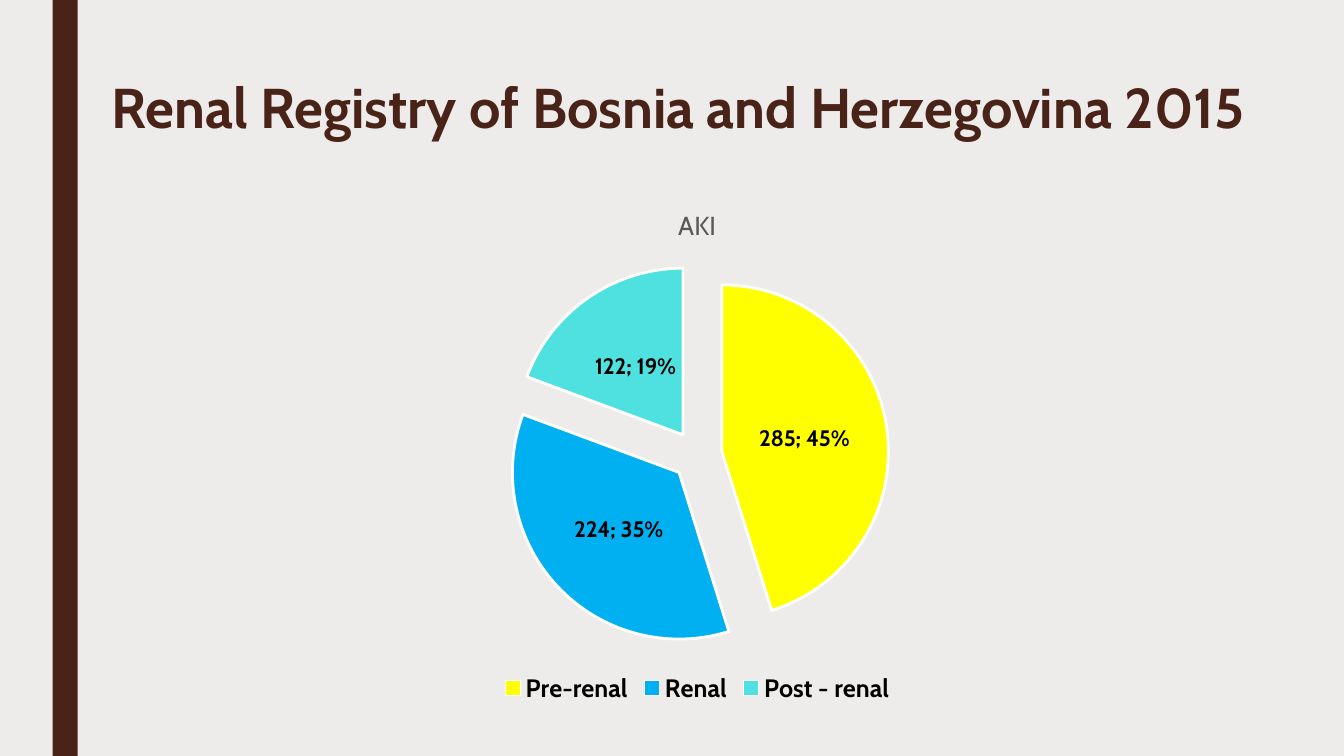
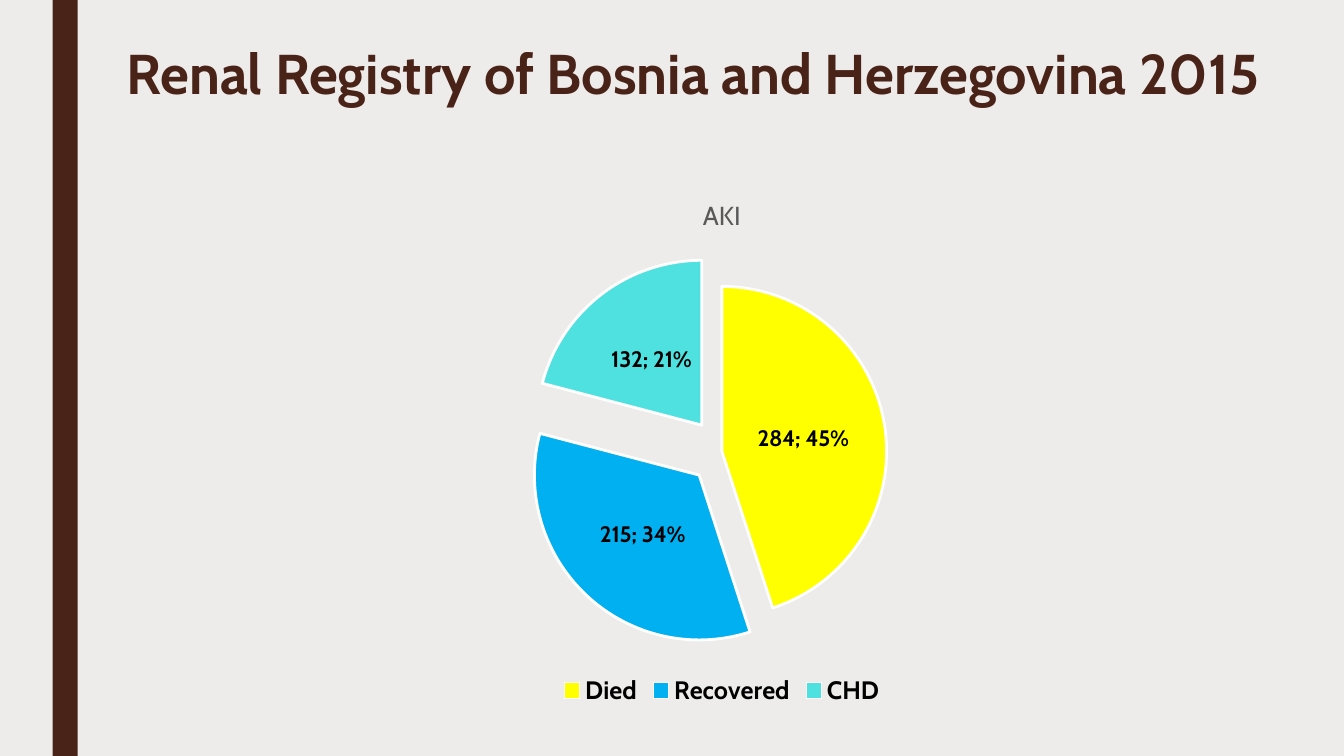
from lxml import etree
from pptx import Presentation
from pptx.chart.data import CategoryChartData
from pptx.dml.color import RGBColor
from pptx.enum.chart import XL_CHART_TYPE as ChartType
from pptx.enum.chart import XL_LABEL_POSITION as LabelPosition
from pptx.enum.chart import XL_LEGEND_POSITION as LegendPosition
from pptx.enum.shapes import MSO_SHAPE as Preset
from pptx.enum.text import MSO_ANCHOR as Anchor
from pptx.enum.text import PP_ALIGN as Align
from pptx.oxml.ns import qn
from pptx.util import Emu, Pt

EMU_PER_PX = 9525
FONT = "Cabin"
PAPER, BROWN, BLACK, GREY, WHITE = "EDECEB", "4A2318", "000000", "595959", "FFFFFF"
SLICE_COLORS = ("FFFF00", "00B0F0", "4EE1E0")

TITLE_FORMAT = {"size": Pt(40), "bold": True}
CHART_FORMAT = {"size": Pt(10)}
CHART_TITLE_FORMAT = {"size": Pt(18.6), "bold": False}
LEGEND_FORMAT = {"size": Pt(18), "bold": True}
LABEL_FORMAT = {"size": Pt(16), "bold": True}
LABEL_CONTENT = {
    "show_value": True,
    "show_percentage": True,
    "show_category_name": False,
    "show_series_name": False,
    "show_legend_key": False,
    "position": LabelPosition.CENTER,
}

HEADING = "Renal Registry of Bosnia and Herzegovina 2015"
PAGES = (
    {
        "title_at": (97, 72, 1152, 80),
        "chart_at": (113, 178, 1102, 497),
        "counts": {"Pre-renal": 285, "Renal": 224, "Post - renal": 122},
        "explosions": (15, 15, 15),
    },
    {
        "title_at": (111, 40, 1152, 80),
        "chart_at": (144, 168, 1087, 509),
        "counts": {"Died": 284, "Recovered": 215, "CHD": 132},
        "explosions": (0, 20, 20),
    },
)


def px(*lengths):
    return [Emu(length * EMU_PER_PX) for length in lengths]


def rgb(hex_color):
    return RGBColor.from_string(hex_color)


def set_formats(target, formats):
    for name, value in formats.items():
        setattr(target, name, value)


def set_font(font, color, formats):
    set_formats(font, {"name": FONT, **formats})
    font.color.rgb = rgb(color)


def paint(fill, color):
    fill.solid()
    fill.fore_color.rgb = rgb(color)


def add_band(page):
    band = page.shapes.add_shape(Preset.RECTANGLE, *px(50, 0, 24, 720))
    band.shadow.inherit = False
    paint(band.fill, BROWN)
    band.line.fill.background()


def add_title(page, text, at):
    frame = page.shapes.add_textbox(*px(*at)).text_frame
    frame.word_wrap = True
    frame.vertical_anchor = Anchor.TOP
    para = frame.paragraphs[0]
    para.alignment = Align.LEFT
    para.line_spacing = 0.89
    span = para.add_run()
    span.text = text
    set_font(span.font, BROWN, TITLE_FORMAT)


def style_slices(chart, explosions):
    """Colour each slice and pull it out by a percentage of the radius."""
    points = chart.plots[0].series[0].points
    for index, color in enumerate(SLICE_COLORS):
        look = points[index].format
        paint(look.fill, color)
        look.line.color.rgb = rgb(WHITE)
        look.line.width = Pt(2)
    for slice_element, explosion in zip(chart.element.iter(qn("c:dPt")), explosions):
        offset = etree.Element(qn("c:explosion"))
        offset.set("val", str(explosion))
        slice_element.find(qn("c:spPr")).addprevious(offset)


def label_slices(chart):
    labels = chart.plots[0].series[0].data_labels
    set_formats(labels, LABEL_CONTENT)
    set_font(labels.font, BLACK, LABEL_FORMAT)
    separator = etree.Element(qn("c:separator"))
    separator.text = "; "
    label_element = chart.element.find(".//" + qn("c:ser") + "/" + qn("c:dLbls"))
    flags = [label_element.find(qn(tag)) for tag in ("c:showPercent", "c:showBubbleSize")]
    last_flag = [flag for flag in flags if flag is not None][-1]
    last_flag.addnext(separator)


def add_chart_title(chart, text):
    chart.has_title = True
    span = chart.chart_title.text_frame.paragraphs[0].add_run()
    span.text = text
    set_font(span.font, GREY, CHART_TITLE_FORMAT)


def add_legend(chart):
    chart.has_legend = True
    chart.legend.position = LegendPosition.BOTTOM
    chart.legend.include_in_layout = False
    set_font(chart.legend.font, BLACK, LEGEND_FORMAT)


def add_pie(page, at, counts, explosions):
    chart_data = CategoryChartData()
    chart_data.categories = list(counts)
    chart_data.add_series("AKI", list(counts.values()))
    chart = page.shapes.add_chart(ChartType.PIE, *px(*at), chart_data).chart
    chart.plots[0].vary_by_categories = True
    set_font(chart.font, BLACK, CHART_FORMAT)
    add_chart_title(chart, "AKI")
    add_legend(chart)
    style_slices(chart, explosions)
    label_slices(chart)


def main():
    deck = Presentation()
    deck.slide_width, deck.slide_height = px(1280, 720)
    paint(deck.slide_master.background.fill, PAPER)
    blank = deck.slide_layouts[6]
    for content in PAGES:
        page = deck.slides.add_slide(blank)
        add_band(page)
        add_title(page, HEADING, content["title_at"])
        add_pie(page, content["chart_at"], content["counts"], content["explosions"])
    deck.save("out.pptx")


if __name__ == "__main__":
    main()
